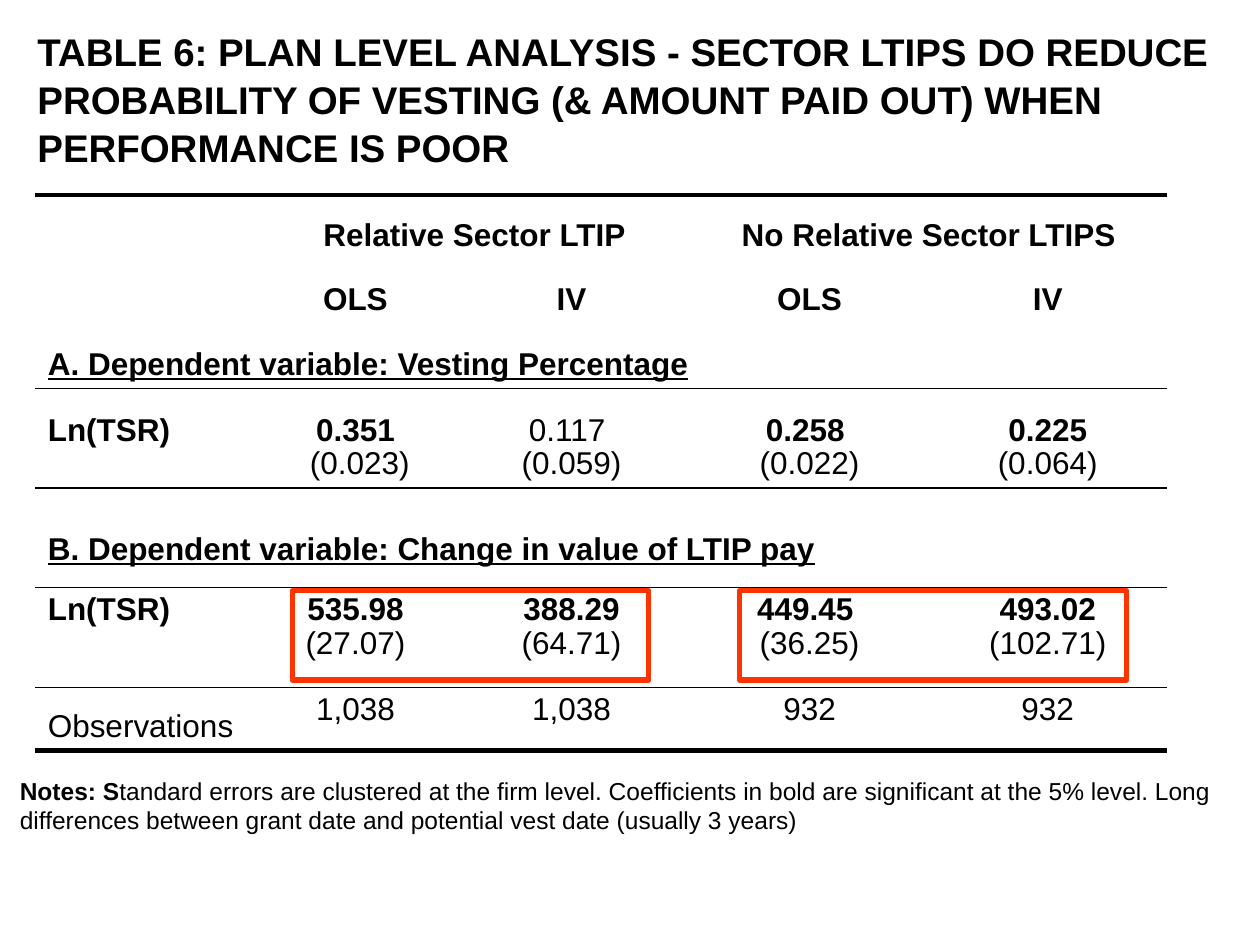
from dataclasses import dataclass

from lxml.etree import SubElement
from pptx import Presentation
from pptx.dml.color import RGBColor
from pptx.enum.shapes import MSO_SHAPE as Preset
from pptx.enum.text import MSO_ANCHOR as Anchor, MSO_AUTO_SIZE as AutoSize, PP_ALIGN as Align
from pptx.oxml.ns import qn
from pptx.util import Cm, Pt


@dataclass(frozen=True)
class Theme:
    font: str = "Arial"
    ink: str = "000000"
    accent: str = "FF3300"
    title_size: int = 22
    table_size: int = 18
    caption_size: int = 14
    line_spacing: float = 0.95
    outline: int = 3


class SlideBuilder:
    def __init__(self, presentation, theme):
        self.theme = theme
        self.slide = presentation.slides.add_slide(presentation.slide_layouts[5])

    def add_run(self, paragraph, text, size, bold=False, underline=False):
        run = paragraph.add_run()
        run.text = text
        font = run.font
        font.name, font.size = self.theme.font, Pt(size)
        font.bold, font.underline = bold, underline
        font.color.rgb = RGBColor.from_string(self.theme.ink)

    def paragraphs(self, frame, count):
        return [frame.paragraphs[0]] + [frame.add_paragraph() for _ in range(count - 1)]

    def title(self, lines, left, top, width, height):
        shape = self.slide.shapes.title
        shape.left, shape.top, shape.width, shape.height = map(Cm, (left, top, width, height))
        frame = shape.text_frame
        frame.auto_size, frame.vertical_anchor = AutoSize.NONE, Anchor.TOP
        for paragraph, line in zip(self.paragraphs(frame, len(lines)), lines):
            paragraph.alignment, paragraph.line_spacing = Align.LEFT, 1.04
            self.add_run(paragraph, line, self.theme.title_size, bold=True)

    def caption(self, runs, left, top, width, height):
        frame = self.slide.shapes.add_textbox(*map(Cm, (left, top, width, height))).text_frame
        frame.word_wrap = True
        for text, bold in runs:
            self.add_run(frame.paragraphs[0], text, self.theme.caption_size, bold)

    def frame(self, left, top, width, height):
        shape = self.slide.shapes.add_shape(Preset.RECTANGLE, *map(Cm, (left, top, width, height)))
        shape.shadow.inherit = False
        shape.fill.background()
        shape.line.color.rgb = RGBColor.from_string(self.theme.accent)
        shape.line.width = Pt(self.theme.outline)

    def table(self, left, top, widths, heights, rules):
        table = self.slide.shapes.add_table(
            len(heights), len(widths), *map(Cm, (left, top, sum(widths), sum(heights)))).table
        table.first_row = table.horz_banding = False
        for column, width in zip(table.columns, widths):
            column.width = Cm(width)
        for row, height, above, below in zip(table.rows, heights, rules, rules[1:]):
            row.height = Cm(height)
            for cell in row.cells:
                cell.fill.background()
                self.borders(cell, above, below)
        return table

    def borders(self, cell, above, below):
        properties = cell._tc.get_or_add_tcPr()
        edges = {"a:lnL": 0, "a:lnR": 0, "a:lnT": above, "a:lnB": below}
        for index, (edge, weight) in enumerate(edges.items()):
            line = SubElement(properties, qn(edge))
            properties.insert(index, line)
            if weight:
                line.set("w", str(Pt(weight)))
                fill = SubElement(line, qn("a:solidFill"))
                SubElement(fill, qn("a:srgbClr")).set("val", self.theme.ink)
            else:
                SubElement(line, qn("a:noFill"))

    def cell(self, cell, lines, anchor=Anchor.BOTTOM, align=Align.CENTER,
             underline=False, bottom=0.13):
        cell.vertical_anchor, cell.margin_bottom = anchor, Cm(bottom)
        for paragraph, (text, bold) in zip(self.paragraphs(cell.text_frame, len(lines)), lines):
            paragraph.alignment, paragraph.line_spacing = align, self.theme.line_spacing
            self.add_run(paragraph, text, self.theme.table_size, bold, underline)


def fill_table(builder, table):
    for column, heading in ((1, "Relative Sector LTIP"), (3, "No Relative Sector LTIPS")):
        table.cell(0, column).merge(table.cell(0, column + 1))
        builder.cell(table.cell(0, column), [(heading, True)])
    for column, method in enumerate(("OLS", "IV") * 2, 1):
        builder.cell(table.cell(1, column), [(method, True)])

    sections = (
        (2, "A. Dependent variable: Vesting Percentage", 0.13),
        (4, "B. Dependent variable: Change in value of LTIP pay", 0.41),
    )
    for row, heading, bottom in sections:
        table.cell(row, 0).merge(table.cell(row, 4))
        builder.cell(table.cell(row, 0), [(heading, True)], align=Align.LEFT,
                     underline=True, bottom=bottom)

    labels = (
        (3, "Ln(TSR)", True, Anchor.BOTTOM, 0.81),
        (5, "Ln(TSR)", True, Anchor.TOP, 0.13),
        (6, "Observations", False, Anchor.BOTTOM, 0.13),
    )
    for row, label, bold, anchor, bottom in labels:
        builder.cell(table.cell(row, 0), [(label, bold)], anchor, Align.LEFT, bottom=bottom)

    vesting = (("0.351", " (0.023)", True), ("0.117 ", "(0.059)", False),
               ("0.258 ", "(0.022)", True), ("0.225", "(0.064)", True))
    pay = (("535.98", "(27.07)", True), ("388.29", "(64.71)", True),
           ("449.45 ", "(36.25)", True), ("493.02", "(102.71)", True))
    for row, estimates, anchor in ((3, vesting, Anchor.BOTTOM), (5, pay, Anchor.TOP)):
        for column, (coefficient, error, bold) in enumerate(estimates, 1):
            builder.cell(table.cell(row, column), [(coefficient, bold), (error, False)], anchor)
    for column, count in enumerate(("1,038", "1,038", " 932 ", " 932 "), 1):
        builder.cell(table.cell(6, column), [(count, False)], Anchor.TOP)


def main():
    presentation = Presentation()
    presentation.slide_width, presentation.slide_height = Cm(25.4), Cm(19.05)
    builder = SlideBuilder(presentation, Theme())
    table = builder.table(0.71, 3.93, [4.5, 3.91] + [4.8] * 3,
                          [1.3] * 3 + [2.01] * 3 + [1.27], [3, 0, 0, 1, 1, 1, 1, 3])
    fill_table(builder, table)
    builder.title(("TABLE 6: PLAN LEVEL ANALYSIS - SECTOR LTIPS DO REDUCE",
                   "PROBABILITY OF VESTING (& AMOUNT PAID OUT) WHEN",
                   "PERFORMANCE IS POOR"), 0.5, 0.4, 24.62, 4)
    builder.caption((("Notes: S", True),
                     ("tandard errors are clustered at the firm level. Coefficients in bold are "
                      "significant at the 5% level. Long differences between grant date and "
                      "potential vest date (usually 3 years)", False)), 0.15, 15.52, 24.56, 2.06)
    for left, width in ((5.89, 7.19), (14.91, 7.8)):
        builder.frame(left, 11.91, width, 1.8)
    presentation.save("out.pptx")


if __name__ == "__main__":
    main()
